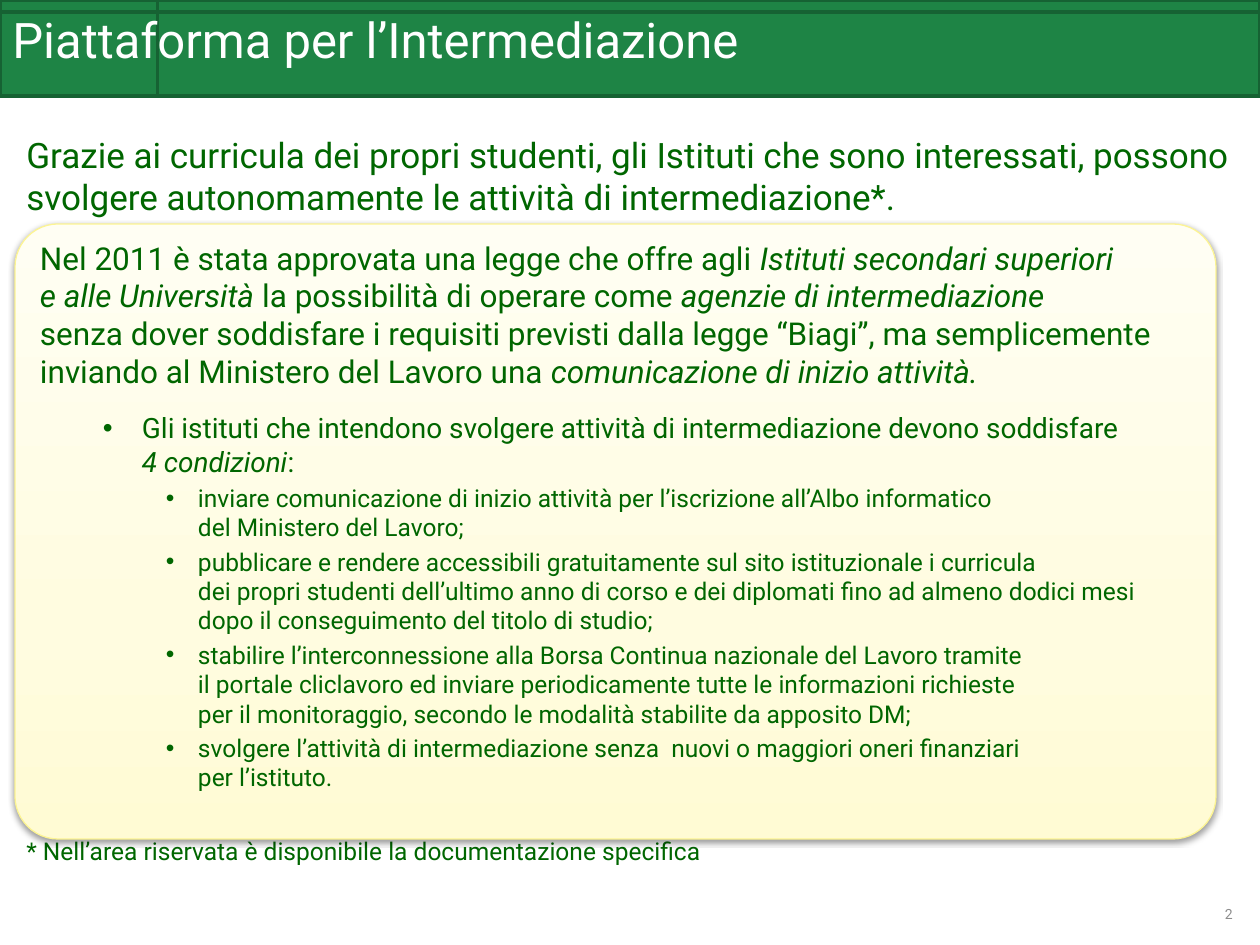
from dataclasses import dataclass

from lxml.etree import SubElement
from pptx import Presentation
from pptx.dml.color import RGBColor
from pptx.enum.shapes import MSO_SHAPE
from pptx.enum.text import MSO_ANCHOR, PP_ALIGN
from pptx.oxml.ns import qn
from pptx.util import Emu, Pt

EMU_PER_PX = 914400 / 126
FONT = "Roboto"
COLORS = {
    "header": "1E8445",
    "header_line": "166233",
    "text": "006600",
    "white": "FFFFFF",
    "number": "8C8C8C",
    "panel_line": "FCF493",
    "shadow": "000000",
}
PANEL_STOPS = ((0, "FFFBD4"), (35, "FFFCE0"), (100, "FFFEF3"))


@dataclass(frozen=True)
class Area:
    left: int
    top: int
    width: int
    height: int


@dataclass(frozen=True)
class Span:
    text: str
    italic: bool = False


@dataclass(frozen=True)
class Para:
    spans: tuple[Span, ...]
    size: int
    level: int = 0
    space_before: float = 0
    margin: int = 0
    hanging: int = 0


@dataclass(frozen=True)
class Label:
    area: Area
    text: str
    size: int
    color: str
    align: PP_ALIGN = PP_ALIGN.LEFT


def condition(text: str) -> Para:
    return Para((Span(text),), 14, 2, 2.8, 158, 32)


HEADER = Area(0, 0, 1260, 96)
PANEL = Area(15, 224, 1201, 615)
LABELS = (
    Label(Area(14, 127, 1232, 92),
          "Grazie ai curricula dei propri studenti, gli Istituti che sono interessati, "
          "possono svolgere autonomamente le attività di intermediazione*.", 20, "text"),
    Label(Area(14, 830, 1232, 42),
          "* Nell’area riservata è disponibile la documentazione specifica", 14, "text"),
    Label(Area(0, 3, 1260, 90), "Piattaforma per l’Intermediazione", 28, "white"),
    Label(Area(951, 899, 294, 30), "2", 8, "number", PP_ALIGN.RIGHT),
)
PANEL_PARAS = (
    Para((
        Span("Nel 2011 è stata approvata una legge che offre agli "),
        Span("Istituti secondari superiori\ne alle Università", True),
        Span(" la possibilità di operare come "),
        Span("agenzie di intermediazione\n", True),
        Span("senza dover soddisfare i requisiti previsti dalla legge “Biagi”, ma "
             "semplicemente inviando al Ministero del Lavoro una "),
        Span("comunicazione di inizio attività.", True),
    ), 18),
    Para((
        Span("Gli istituti che intendono svolgere attività di intermediazione "
             "devono soddisfare\n"),
        Span("4 condizioni", True),
        Span(":"),
    ), 16, 1, 12, 102, 39),
    condition("inviare comunicazione di inizio attività per l’iscrizione all’Albo "
              "informatico\ndel Ministero del Lavoro;"),
    condition("pubblicare e rendere accessibili gratuitamente sul sito istituzionale i "
              "curricula\ndei propri studenti dell’ultimo anno di corso e dei diplomati "
              "fino ad almeno dodici mesi dopo il conseguimento del titolo di studio;"),
    condition("stabilire l’interconnessione alla Borsa Continua nazionale del Lavoro "
              "tramite\nil portale cliclavoro ed inviare periodicamente tutte le "
              "informazioni richieste\nper il monitoraggio, secondo le modalità "
              "stabilite da apposito DM;"),
    condition("svolgere l’attività di intermediazione senza  nuovi o maggiori oneri "
              "finanziari\nper l’istituto."),
)


def px(value: int) -> Emu:
    return Emu(round(value * EMU_PER_PX))


def bounds(area: Area) -> tuple[Emu, ...]:
    return px(area.left), px(area.top), px(area.width), px(area.height)


def rgb(name: str) -> RGBColor:
    return RGBColor.from_string(COLORS[name])


def add_span(paragraph, span: Span, size: int, color: str) -> None:
    """Add the text as runs, with a line break at each newline."""
    for index, piece in enumerate(span.text.split("\n")):
        if index:
            paragraph.add_line_break()
        if piece:
            run = paragraph.add_run()
            run.text = piece
            run.font.name = FONT
            run.font.size = Pt(size)
            run.font.italic = span.italic
            run.font.color.rgb = rgb(color)


def add_label(page, label: Label) -> None:
    frame = page.shapes.add_textbox(*bounds(label.area)).text_frame
    frame.word_wrap = True
    frame.paragraphs[0].alignment = label.align
    add_span(frame.paragraphs[0], Span(label.text), label.size, label.color)


def add_shape(page, kind: MSO_SHAPE, area: Area, line: str, line_width: float):
    shape = page.shapes.add_shape(kind, *bounds(area))
    shape.shadow.inherit = False
    shape.line.color.rgb = rgb(line)
    shape.line.width = Pt(line_width)
    return shape


def add_color(parent, value: str):
    return SubElement(parent, qn("a:srgbClr"), val=value)


def style_panel(panel) -> None:
    """Give the panel its three-stop gradient and soft drop shadow."""
    panel.fill.gradient()
    panel.fill.gradient_angle = 90
    properties = panel._element.spPr
    stops = properties.find(qn("a:gradFill")).find(qn("a:gsLst"))
    for stop in list(stops):
        stops.remove(stop)
    for position, color in PANEL_STOPS:
        add_color(SubElement(stops, qn("a:gs"), pos=str(position * 1000)), color)
    shadow = SubElement(properties.find(qn("a:effectLst")), qn("a:outerShdw"),
                        blurRad=str(Pt(3.1)), dist=str(Pt(1.6)), dir="5400000",
                        rotWithShape="0")
    SubElement(add_color(shadow, COLORS["shadow"]), qn("a:alpha"), val="38000")


def add_para(paragraph, para: Para) -> None:
    paragraph.alignment = PP_ALIGN.LEFT
    paragraph.level = para.level
    paragraph.space_before = Pt(para.space_before)
    if para.hanging:
        properties = paragraph._p.get_or_add_pPr()
        properties.set("marL", str(px(para.margin)))
        properties.set("indent", str(-px(para.hanging)))
        SubElement(properties, qn("a:buFont"), typeface="Arial")
        SubElement(properties, qn("a:buChar"), char="•")
    for span in para.spans:
        add_span(paragraph, span, para.size, "text")


def add_panel(page) -> None:
    panel = add_shape(page, MSO_SHAPE.ROUNDED_RECTANGLE, PANEL, "panel_line", 0.75)
    panel.adjustments[0] = 0.07
    style_panel(panel)
    frame = panel.text_frame
    frame.word_wrap = True
    frame.vertical_anchor = MSO_ANCHOR.TOP
    frame.margin_top = px(2)
    for index, para in enumerate(PANEL_PARAS):
        add_para(frame.add_paragraph() if index else frame.paragraphs[0], para)


def main() -> None:
    deck = Presentation()
    deck.slide_width, deck.slide_height = px(1260), px(945)
    page = deck.slides.add_slide(deck.slide_layouts[6])
    header = add_shape(page, MSO_SHAPE.FLOWCHART_INTERNAL_STORAGE, HEADER,
                       "header_line", 2)
    header.fill.solid()
    header.fill.fore_color.rgb = rgb("header")
    for label in LABELS:
        add_label(page, label)
    add_panel(page)
    deck.save("out.pptx")


if __name__ == "__main__":
    main()
